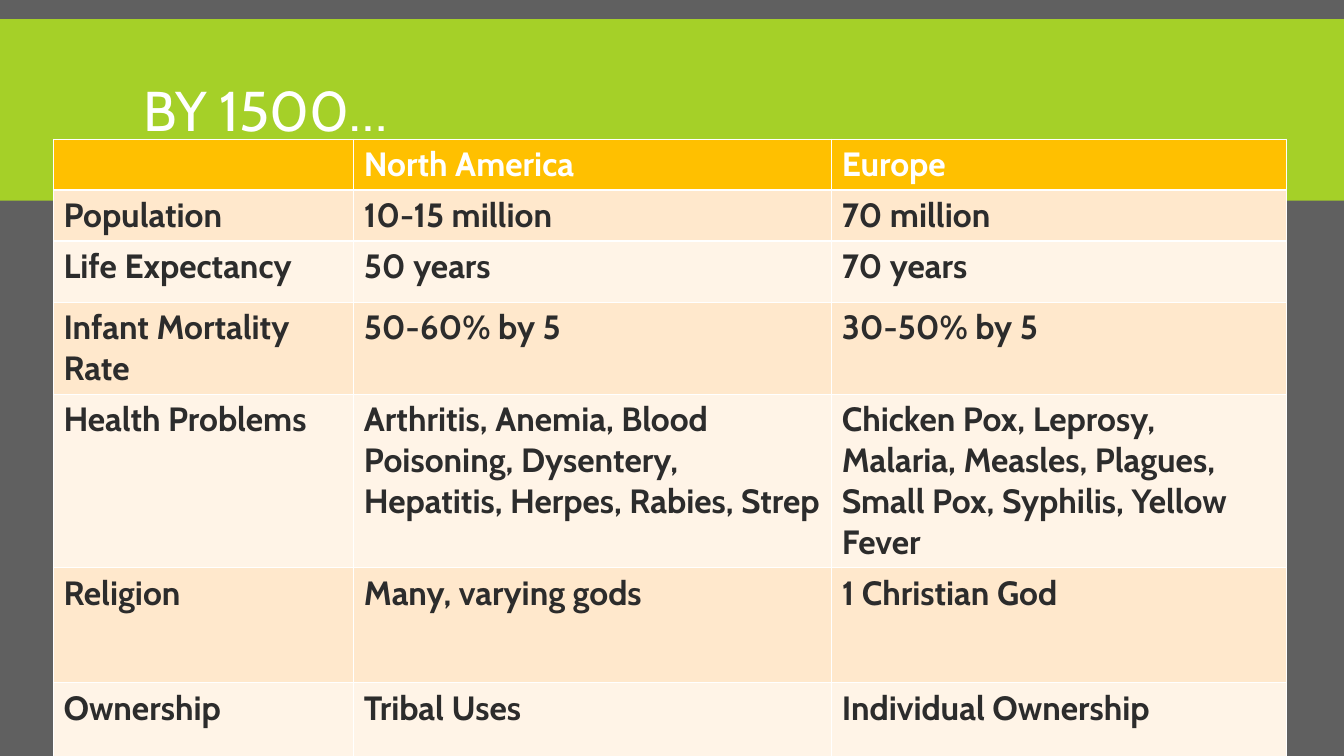
from pptx import Presentation
from pptx.dml.color import RGBColor
from pptx.enum.shapes import MSO_SHAPE
from pptx.enum.text import MSO_ANCHOR, PP_ALIGN
from pptx.util import Inches, Pt

TITLE = "BY 1500…"
ROWS = [
    ("", "North America", "Europe"),
    ("Population", "10-15 million", "70 million"),
    ("Life Expectancy", "50 years", "70 years"),
    ("Infant Mortality Rate", "50-60% by 5", "30-50% by 5"),
    ("Health Problems",
     "Arthritis, Anemia, Blood Poisoning, Dysentery, Hepatitis, Herpes, Rabies, Strep",
     "Chicken Pox, Leprosy, Malaria, Measles, Plagues, Small Pox, Syphilis, Yellow Fever"),
    ("Religion", "Many, varying gods", "1 Christian God"),
    ("Ownership", "Tribal Uses", "Individual Ownership"),
]
COL_WIDTHS = [2.98, 4.74, 4.51]
ROW_HEIGHTS = [0.5, 0.5, 0.61, 0.91, 1.48, 1.14, 1.14]
GREY, GREEN, WHITE, INK = "606060", "A5D028", "FFFFFF", "2C2C2C"
HEADER_FILL, BAND_FILLS = "FFC000", ("FFF4E7", "FFE8CC")
TITLE_FONT = {"name": "Cabin", "size": Pt(40), "bold": False}
CELL_FONT = {"name": "Cabin", "size": Pt(24), "bold": True}


def rgb(value):
    return RGBColor.from_string(value)


def paint(fill, color):
    fill.solid()
    fill.fore_color.rgb = rgb(color)


def write(p, text, font, color):
    r = p.add_run()
    r.text = text
    for name, value in font.items():
        setattr(r.font, name, value)
    r.font.color.rgb = rgb(color)


def box(*lengths):
    return [Inches(v) for v in lengths]


prs = Presentation()
prs.slide_width, prs.slide_height = box(13.33, 7.5)
s = prs.slides.add_slide(prs.slide_layouts[5])
paint(s.background.fill, GREY)

title = s.shapes.title
title.left, title.top, title.width, title.height = box(1.32, 0.31, 10.7, 1.65)
tf = title.text_frame
tf.vertical_anchor = MSO_ANCHOR.MIDDLE
p = tf.paragraphs[0]
p.alignment, p.line_spacing = PP_ALIGN.LEFT, 0.85
write(p, TITLE, TITLE_FONT, WHITE)

band = s.shapes.add_shape(MSO_SHAPE.RECTANGLE, *box(0, 0.19, 13.33, 1.8))
band.shadow.inherit = False
paint(band.fill, GREEN)
band.line.fill.background()
title._element.addprevious(band._element)  # the band lies behind the title

table = s.shapes.add_table(
    len(ROWS), len(COL_WIDTHS),
    *box(0.53, 1.38, sum(COL_WIDTHS), sum(ROW_HEIGHTS))).table
for column, width in zip(table.columns, COL_WIDTHS):
    column.width = Inches(width)
for i, (row, height, texts) in enumerate(zip(table.rows, ROW_HEIGHTS, ROWS)):
    row.height = Inches(height)
    for cell, text in zip(row.cells, texts):
        paint(cell.fill, BAND_FILLS[i % 2] if i else HEADER_FILL)
        if text:
            write(cell.text_frame.paragraphs[0], text, CELL_FONT, INK if i else WHITE)

prs.save("out.pptx")
